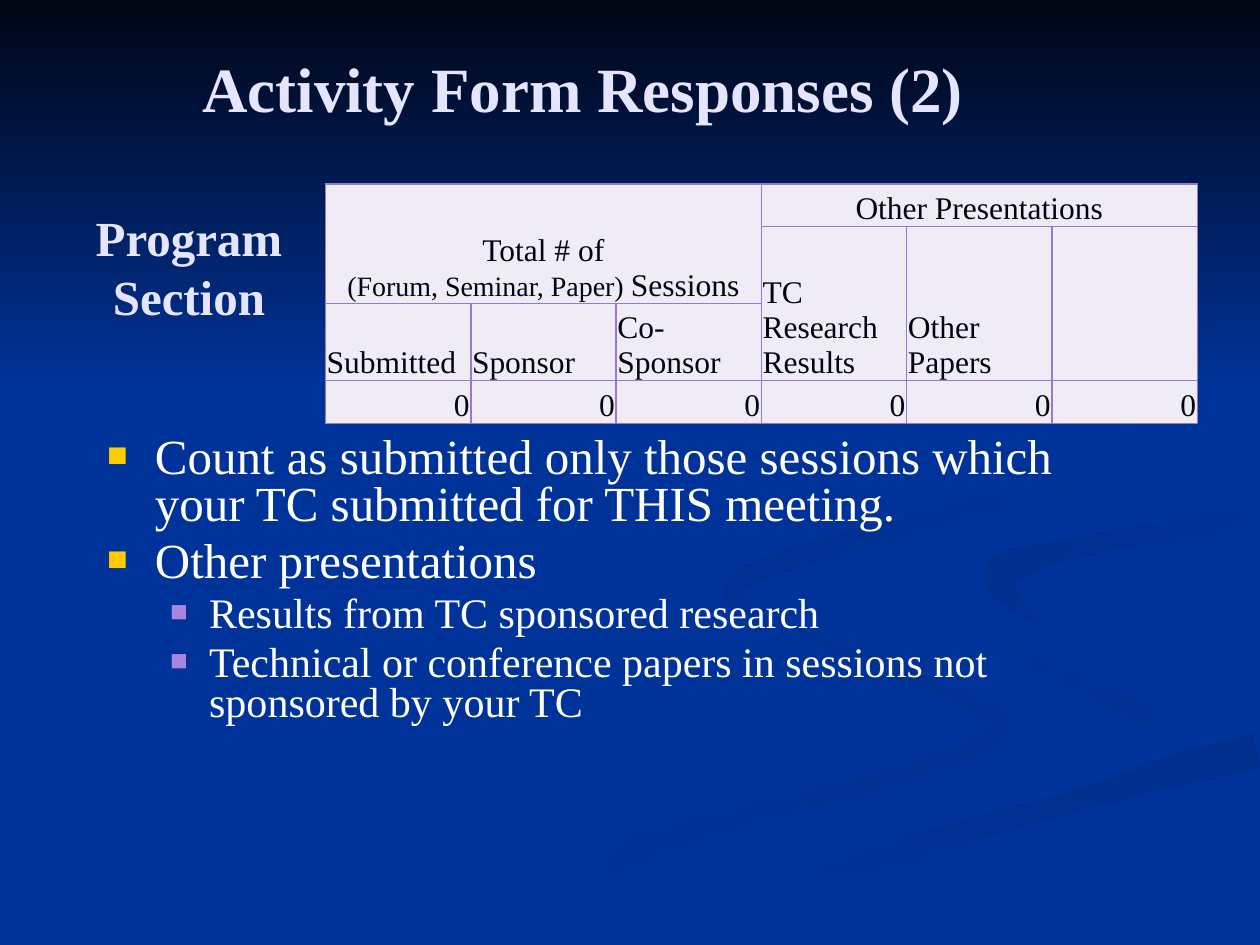
import math

from lxml import etree
from pptx import Presentation, util as u
from pptx.dml.color import RGBColor
from pptx.enum import shapes, text as t
from pptx.oxml import ns

WIDTH, HEIGHT = u.Inches(10), u.Inches(7.5)
FONT = "Times New Roman"
BLUE = RGBColor(0x00, 0x33, 0x99)
NIGHT = RGBColor(0x00, 0x05, 0x14)
DEEP = RGBColor(0x00, 0x2F, 0x8D)
DUSK = RGBColor(0x00, 0x31, 0x93)
LAVENDER = RGBColor(0xE5, 0xE5, 0xFF)
WHITE = RGBColor(0xFF, 0xFF, 0xFF)
GOLD = RGBColor(0xFF, 0xCC, 0x00)
VIOLET = RGBColor(0xA8, 0x86, 0xE0)
CELL = RGBColor(0xEF, 0xEC, 0xF6)
BORDER = RGBColor(0x98, 0x79, 0xCB)
CENTER, RIGHT = t.PP_ALIGN.CENTER, t.PP_ALIGN.RIGHT

UNIT = u.Inches(0.01)
RIGHT_EDGE, BOTTOM_EDGE = 1000, 750
CURVE_STEPS = 8
LONG_RIBBON = [(573, 464, 2), (650, 509, 6), (792, 572, 14), (710, 616, 14),
               (530, 665, 20), (330, 749, 50)]
INNER_CURL = [(724, 464, 1), (815, 524, 11), (930, 575, 25), (894, 605, 1)]
LOWER_BAND = [(537, 749, 30), (640, 702, 25), (809, 645, 22), (998, 595, 28)]
MAIN_RIBBON = [(998, 395, 15), (860, 416, 15), (755, 455, 45), (830, 510, 20),
               (940, 560, 40), (869, 616, 10), (680, 669, 15), (490, 749, 20)]
UPPER_CURL = [(998, 411, 18), (864, 433, 15), (793, 457, 24), (826, 496, 1)]
TOP_RIBBON = [(762, 233, 1), (850, 285, 6), (891, 345, 5), (852, 385, 13),
              (736, 412, 15), (585, 462, 16), (622, 500, 1)]
RIBBONS = [
    (LONG_RIBBON, BLUE, DUSK, 0), (INNER_CURL, BLUE, DUSK, 45),
    (LOWER_BAND, DEEP, BLUE, 90), (MAIN_RIBBON, BLUE, BLUE, 0),
    (UPPER_CURL, DEEP, BLUE, 45), (TOP_RIBBON, DEEP, BLUE, 45)]

BULLETS = [
    (0, "Count as submitted only those sessions which your TC submitted for THIS meeting."),
    (0, "Other presentations"),
    (1, "Results from TC sponsored research"),
    (1, "Technical or conference papers in sessions not sponsored by your TC")]
LEVELS = [(28, GOLD, 0.38, -0.38), (24, VIOLET, 0.81, -0.31)]
MERGES = [(0, 0, 1, 2), (0, 3, 0, 5)] + [(1, column, 2, column) for column in (3, 4, 5)]
HEADINGS = {
    (0, 3): "Other Presentations", (1, 3): "TC Research Results",
    (1, 4): "Other Papers", (2, 0): "Submitted", (2, 1): "Sponsor",
    (2, 2): "Co-Sponsor"}
ROW_HEIGHTS = [0.34, 0.61, 0.61, 0.34]
COLUMNS = 6


def area(left, top, width, height):
    return [int(share * side / 100) for share, side in
            zip((left, top, width, height), (WIDTH, HEIGHT) * 2)]


def place(shape, *shares):
    shape.left, shape.top, shape.width, shape.height = area(*shares)
    tree = shape.element.getparent()
    tree.append(shape.element)


def add_text(paragraph, text, size=18, color=NIGHT, bold=False, align=None):
    run = paragraph.add_run()
    run.text = text
    run.font.name, run.font.size, run.font.bold = FONT, u.Pt(size), bold
    run.font.color.rgb = color
    if align is not None:
        paragraph.alignment = align


def add_child(parent, tag, **attributes):
    return etree.SubElement(parent, ns.qn(tag), attributes)


def fill_gradient(shape, start, end, angle):
    shape.shadow.inherit = False
    shape.line.fill.background()
    shape.fill.gradient()
    shape.fill.gradient_angle = -angle % 360
    for stop, color, position in zip(shape.fill.gradient_stops, (start, end), (0, 1)):
        stop.color.rgb = color
        stop.position = position


def blend(before, start, end, after, share):
    return (start + share * (end - before) / 2
            + share ** 2 * (before - 2.5 * start + 2 * end - after / 2)
            + share ** 3 * (1.5 * (start - end) + (after - before) / 2))


def smooth_curve(knots):
    padded = [knots[0], *knots, knots[-1]]
    curve = []
    for four_knots in zip(padded, padded[1:], padded[2:], padded[3:]):
        for step in range(CURVE_STEPS):
            curve.append([blend(*values, step / CURVE_STEPS)
                          for values in zip(*four_knots)])
    return curve + [knots[-1]]


def ribbon_outline(knots):
    curve = smooth_curve(knots)
    left_side, right_side = [], []
    for before, (x, y, thickness), after in zip(curve[:1] + curve, curve, curve[1:] + curve[-1:]):
        direction = math.atan2(after[1] - before[1], after[0] - before[0])
        across = thickness / 2 * math.sin(direction)
        along = thickness / 2 * math.cos(direction)
        left_side.append((x + across, y - along))
        right_side.append((x - across, y + along))
    return [(min(x, RIGHT_EDGE), min(y, BOTTOM_EDGE))
            for x, y in left_side + right_side[::-1]]


def add_ribbon(slide, knots, start, end, angle):
    first, *others = ribbon_outline(knots)
    builder = slide.shapes.build_freeform(*first, scale=UNIT)
    builder.add_line_segments(others, close=True)
    fill_gradient(builder.convert_to_shape(), start, end, angle)


def add_sky(slide):
    sky = slide.shapes.add_shape(shapes.MSO_SHAPE.RECTANGLE, *area(0, 0, 100, 41.07))
    fill_gradient(sky, NIGHT, BLUE, 90)


def add_title(slide):
    title = slide.shapes.title
    place(title, 5, 4, 82.5, 10.4)
    title.text_frame.vertical_anchor = t.MSO_ANCHOR.MIDDLE
    add_text(title.text_frame.paragraphs[0], "Activity Form Responses (2)",
             size=36, color=LAVENDER, bold=True, align=CENTER)


def add_bullets(slide):
    body = slide.placeholders[1]
    place(body, 7.5, 45.6, 85, 35.6)
    frame = body.text_frame
    for index, (level, text) in enumerate(BULLETS):
        paragraph = frame.add_paragraph() if index else frame.paragraphs[0]
        size, color, margin, indent = LEVELS[level]
        paragraph.level = level
        paragraph.line_spacing = 0.8
        add_text(paragraph, text, size=size, color=WHITE)
        properties = paragraph._p.get_or_add_pPr()
        properties.set("marL", str(u.Inches(margin)))
        properties.set("indent", str(u.Inches(indent)))
        add_child(add_child(properties, "a:buClr"), "a:srgbClr", val=str(color))
        add_child(properties, "a:buSzPct", val="70000")
        add_child(properties, "a:buFont", typeface=FONT)
        add_child(properties, "a:buChar", char="■")


def add_label(slide):
    frame = slide.shapes.add_textbox(*area(5, 21.3, 20, 13.9)).text_frame
    frame.word_wrap = True
    frame.auto_size = t.MSO_AUTO_SIZE.SHAPE_TO_FIT_TEXT
    for paragraph, word in zip((frame.paragraphs[0], frame.add_paragraph()),
                               ("Program", "Section")):
        add_text(paragraph, word, size=28, color=LAVENDER, bold=True, align=CENTER)


def format_cell(cell):
    cell.margin_left = cell.margin_right = cell.margin_top = u.Inches(0.01)
    cell.margin_bottom = 0
    cell.vertical_anchor = t.MSO_ANCHOR.BOTTOM
    properties = cell._tc.get_or_add_tcPr()
    for side in ("a:lnL", "a:lnR", "a:lnT", "a:lnB"):
        line = add_child(properties, side, w=str(u.Pt(1)))
        add_child(add_child(line, "a:solidFill"), "a:srgbClr", val=str(BORDER))
    cell.fill.solid()
    cell.fill.fore_color.rgb = CELL


def add_sessions_table(slide):
    table = slide.shapes.add_table(len(ROW_HEIGHTS), COLUMNS,
                                   *area(25.83, 19.46, 69.2, 25.33)).table
    for row, height in zip(table.rows, ROW_HEIGHTS):
        row.height = u.Inches(height)
    for cell in table.iter_cells():
        format_cell(cell)
    for top, left, bottom, right in MERGES:
        table.cell(top, left).merge(table.cell(bottom, right))
    total = table.cell(0, 0).text_frame.paragraphs[0]
    add_text(total, "Total # of", align=CENTER)
    total.add_line_break()
    add_text(total, "(Forum, Seminar, Paper) ", size=16)
    add_text(total, "Sessions")
    for (row, column), heading in HEADINGS.items():
        add_text(table.cell(row, column).text_frame.paragraphs[0], heading,
                 align=None if row else CENTER)
    for column in range(COLUMNS):
        add_text(table.cell(3, column).text_frame.paragraphs[0], "0", align=RIGHT)


def main():
    presentation = Presentation()
    presentation.slide_width, presentation.slide_height = WIDTH, HEIGHT
    slide = presentation.slides.add_slide(presentation.slide_layouts[1])
    slide.background.fill.solid()
    slide.background.fill.fore_color.rgb = BLUE
    for ribbon in RIBBONS:
        add_ribbon(slide, *ribbon)
    add_sky(slide)
    add_title(slide)
    add_bullets(slide)
    add_label(slide)
    add_sessions_table(slide)
    presentation.save("out.pptx")


if __name__ == "__main__":
    main()
